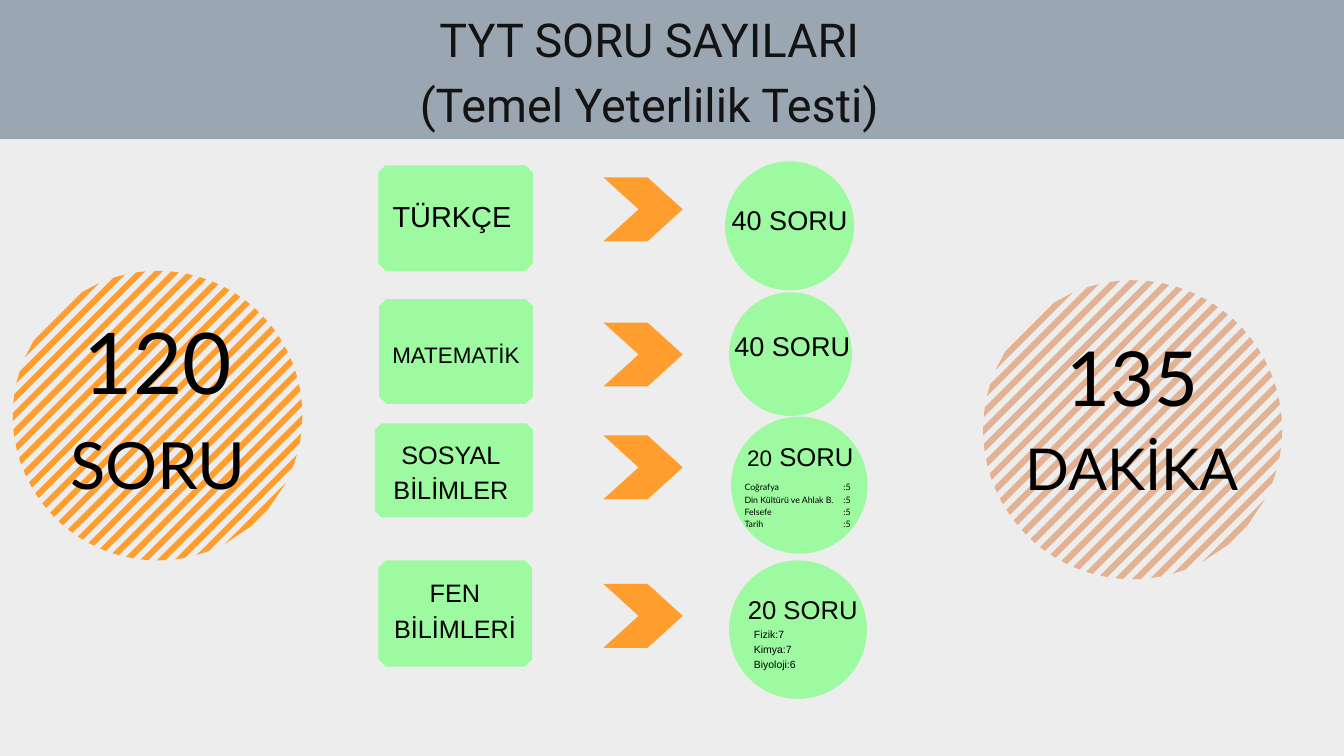
from math import sqrt

from pptx import Presentation
from pptx.dml.color import RGBColor
from pptx.enum.shapes import MSO_SHAPE as Shape
from pptx.enum.text import MSO_ANCHOR as Anchor, MSO_AUTO_SIZE as AutoSize, PP_ALIGN as Align
from pptx.oxml.ns import qn
from pptx.util import Inches, Pt
from lxml.etree import SubElement

BACKGROUND = RGBColor(0xED, 0xED, 0xED)
BANNER = RGBColor(0x9A, 0xA7, 0xB2)
GREEN = RGBColor(0x9D, 0xFA, 0xA0)
ORANGE = RGBColor(0xFF, 0x9E, 0x2E)
PEACH = RGBColor(0xE2, 0xB2, 0x92)
TITLE_INK = RGBColor(0x14, 0x13, 0x13)
BLACK = RGBColor(0, 0, 0)

LINE_SPACING = 1.4
STRIPE_COUNT = 24
STRIPE_START, STRIPE_PITCH, STRIPE_WIDTH = -1.375, 0.1185, 0.058

SUBJECTS = [
    dict(
        badge=(5.63, 2.46, 2.3, 1.57), name_box=(5.42, 2.87, 2.61, 0.57),
        name=["TÜRKÇE"], name_size=31, arrow_top=2.64,
        circle=(10.79, 2.4, 1.92, 1.92), count_box=(10.65, 2.95, 2.2, 0.54),
        count=[("40 SORU", 29)],
    ),
    dict(
        badge=(5.64, 4.45, 2.29, 1.56), name_box=(5.73, 5.01, 2.11, 0.53),
        name=["MATEMATİK"], name_size=24, arrow_top=4.8,
        circle=(10.85, 4.35, 1.83, 1.84), count_box=(10.69, 4.82, 2.2, 0.54),
        count=[("40 SORU", 29)],
    ),
    dict(
        badge=(5.58, 6.3, 2.35, 1.4), name_box=(5.76, 6.46, 1.9, 1.07),
        name=["SOSYAL", "BİLİMLER"], name_size=27, arrow_top=6.48,
        circle=(10.88, 6.2, 2.03, 2.04), count_box=(10.76, 6.49, 2.3, 0.55),
        count=[("20", 24), (" SORU", 27.5)],
        detail_box=(11.08, 7.15, 1.81, 0.73), detail_size=9.4, detail_font="Lato",
        details=["Coğrafya\t:5", "Din Kültürü ve Ahlak B.\t:5", "Felsefe\t:5", "Tarih\t:5"],
    ),
    dict(
        badge=(5.63, 8.34, 2.29, 1.58), name_box=(5.73, 8.52, 2.08, 1.07),
        name=["FEN", "BİLİMLERİ"], name_size=27, arrow_top=8.69,
        circle=(10.85, 8.34, 2.05, 2.06), count_box=(10.95, 8.76, 1.99, 0.55),
        count=[("20 SORU", 27.5)],
        detail_box=(11.22, 9.32, 1.45, 0.63), detail_size=11.2, detail_font="Arial",
        details=["Fizik:7", "Kimya:7", "Biyoloji:6"],
    ),
]


def to_inches(box):
    return [Inches(value) for value in box]


def paint(shape, color):
    shape.shadow.inherit = False
    shape.fill.solid()
    shape.fill.fore_color.rgb = color
    shape.line.fill.background()


def add_figure(slide, kind, box, color, adjustments=()):
    shape = slide.shapes.add_shape(kind, *to_inches(box))
    for index, value in enumerate(adjustments):
        shape.adjustments[index] = value
    paint(shape, color)
    return shape


def write_text(frame, lines, font="Arial", color=BLACK, align=Align.CENTER, tab=None):
    frame.margin_left = frame.margin_top = frame.margin_right = frame.margin_bottom = 0
    frame.word_wrap = True
    frame.auto_size = AutoSize.NONE
    frame.vertical_anchor = Anchor.TOP
    for index, runs in enumerate(lines):
        paragraph = frame.add_paragraph() if index else frame.paragraphs[0]
        paragraph.alignment = align
        paragraph.space_before = paragraph.space_after = Pt(0)
        paragraph.line_spacing = Pt(LINE_SPACING * max(size for _, size in runs))
        if tab:
            tab_list = SubElement(paragraph._p.get_or_add_pPr(), qn("a:tabLst"))
            SubElement(tab_list, qn("a:tab"), pos=str(Inches(tab)), algn="l")
        for text, size in runs:
            run = paragraph.add_run()
            run.text = text
            run.font.name = font
            run.font.size = Pt(size)
            run.font.color.rgb = color


def add_text(slide, box, lines, **text_format):
    text_box = slide.shapes.add_textbox(*to_inches(box))
    write_text(text_box.text_frame, lines, **text_format)


def add_banner(slide, box):
    banner = add_figure(slide, Shape.RECTANGLE, box, BANNER)
    title = slide.shapes.title
    title.element.addprevious(banner.element)
    title.left, title.top, title.width, title.height = to_inches((4.15, 0.02, 11.03, 1.91))
    lines = [[("TYT SORU SAYILARI", 50)], [("(Temel Yeterlilik Testi)", 50)]]
    write_text(title.text_frame, lines, font="Roboto", color=TITLE_INK)


def add_subject(slide, subject):
    add_figure(slide, Shape.OCTAGON, subject["badge"], GREEN, [0.07])
    add_figure(slide, Shape.CHEVRON, (8.98, subject["arrow_top"], 1.18, 0.95), ORANGE, [0.55])
    add_figure(slide, Shape.OVAL, subject["circle"], GREEN)
    add_text(slide, subject["name_box"], [[(line, subject["name_size"])] for line in subject["name"]])
    add_text(slide, subject["count_box"], [subject["count"]])
    if "details" in subject:
        lines = [[(line, subject["detail_size"])] for line in subject["details"]]
        tab = 1.47 if "\t" in subject["details"][0] else None
        add_text(slide, subject["detail_box"], lines,
                 font=subject["detail_font"], align=Align.LEFT, tab=tab)


def chord(center_x, center_y, radius, offset):
    shift = offset * radius / 2
    reach = radius * sqrt(max(0, 1 - offset ** 2 / 2) / 2)
    return [(Inches(center_x + shift + side * reach), Inches(center_y + shift - side * reach))
            for side in (-1, 1)]


def add_striped_total(slide, box, color, text_box, lines):
    left, top, diameter = box
    radius = diameter / 2
    circle = (left + radius, top + radius, radius)
    builder = None
    for index in range(STRIPE_COUNT):
        offset = STRIPE_START + index * STRIPE_PITCH
        first, second = chord(*circle, offset)
        third, fourth = chord(*circle, offset + STRIPE_WIDTH)
        if builder is None:
            builder = slide.shapes.build_freeform(*first)
        else:
            builder.move_to(*first)
        builder.add_line_segments([second, fourth, third], close=True)
    paint(builder.convert_to_shape(), color)
    add_text(slide, text_box, lines, font="Lato")


def main():
    presentation = Presentation()
    presentation.slide_width, presentation.slide_height = Inches(20), Inches(11.25)
    slide = presentation.slides.add_slide(presentation.slide_layouts[5])
    slide.background.fill.solid()
    slide.background.fill.fore_color.rgb = BACKGROUND

    add_banner(slide, (0, 0, 20, 2.07))
    for subject in SUBJECTS:
        add_subject(slide, subject)
    add_striped_total(slide, (0.19, 4.03, 4.31), ORANGE, (0.6, 4.35, 3.5, 3.16),
                      [[("120", 91.1)], [("SORU", 69.7)]])
    add_striped_total(slide, (14.63, 4.17, 4.45), PEACH, (15.1, 4.69, 3.5, 2.82),
                      [[("135", 81.2)], [("DAKİKA", 61.8)]])
    presentation.save("out.pptx")


if __name__ == "__main__":
    main()
